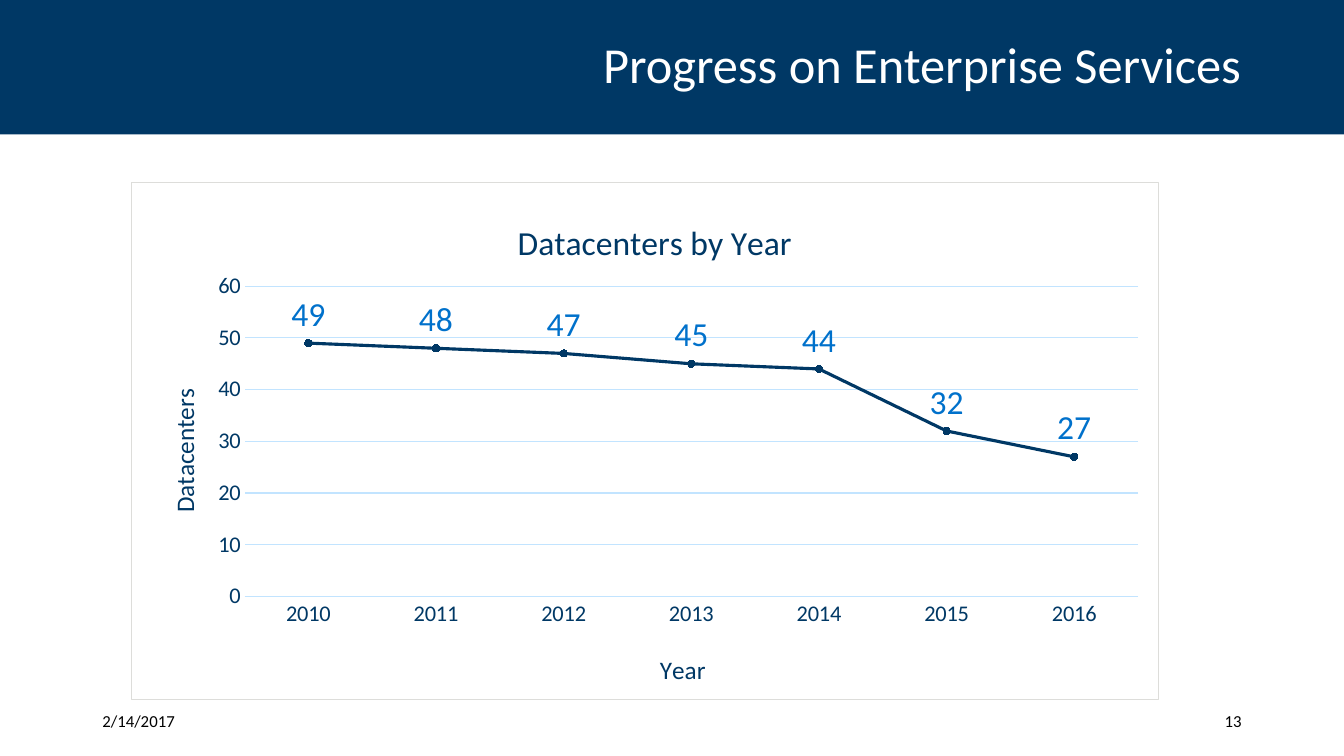
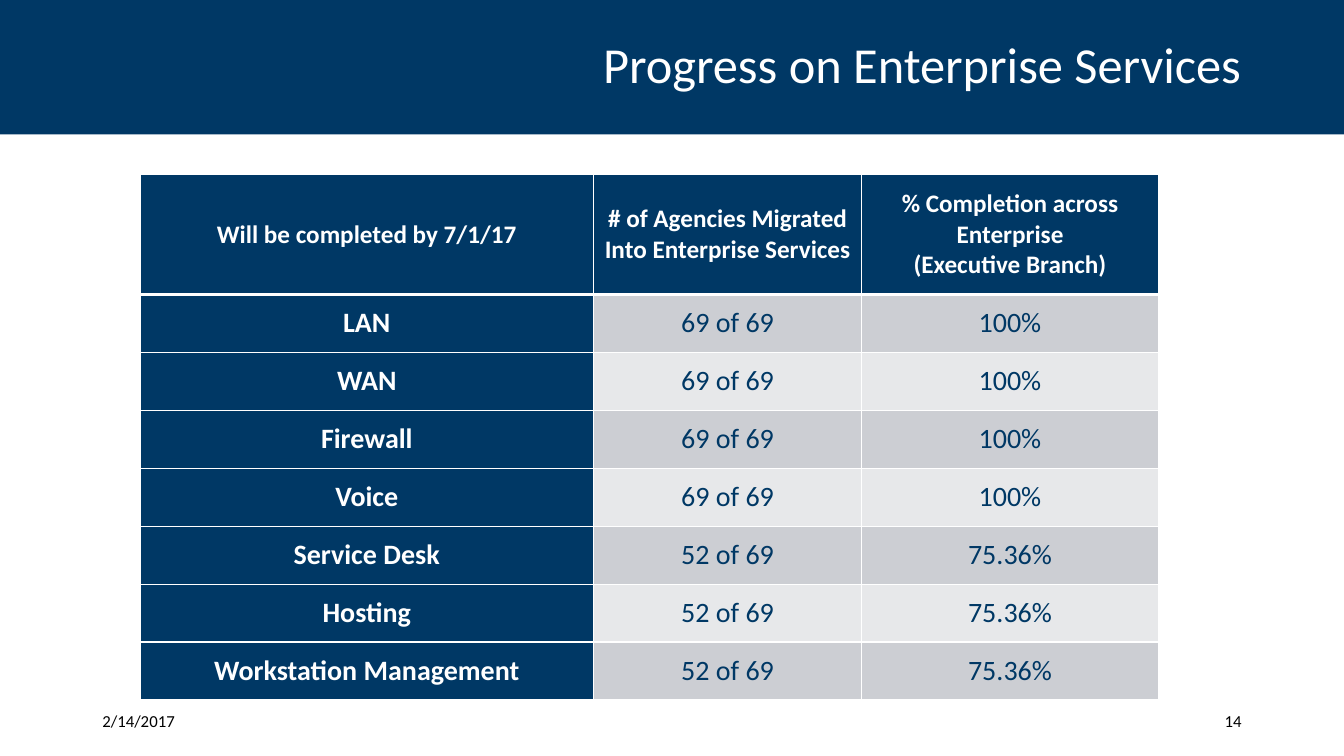
"""Build two slides on enterprise services: a line chart and a status table."""
import lxml.etree
import pptx
import pptx.chart.data
import pptx.dml.color
import pptx.enum.chart
import pptx.enum.shapes
import pptx.enum.text
import pptx.oxml
import pptx.oxml.ns
import pptx.util

Pt = pptx.util.Pt
qn = pptx.oxml.ns.qn
ALIGN = pptx.enum.text.PP_ALIGN
MIDDLE = pptx.enum.text.MSO_ANCHOR.MIDDLE
FONT = "Calibri"
HEX = {"navy": "003865", "white": "FFFFFF", "black": "000000", "blue": "0071CB",
       "grid": "C2E4FF", "frame": "DDDDDA", "dark": "CCCED3", "light": "E7E8EA"}


class Deck:
    def __init__(self):
        self.file = pptx.Presentation()
        self.file.slide_width, self.file.slide_height = Pt(960), Pt(540)
        self.slide = None

    def color(self, name):
        return pptx.dml.color.RGBColor.from_string(HEX[name])

    def style(self, font, size, color, bold=False):
        font.name, font.size, font.bold = FONT, Pt(size), bold
        font.color.rgb = self.color(color)

    def paint(self, fill, color):
        fill.solid()
        fill.fore_color.rgb = self.color(color)

    def stroke(self, line, color, width):
        self.paint(line.fill, color)
        line.width = Pt(width)

    def words(self, frame, text, size, color, align):
        frame.text = text
        frame.word_wrap, frame.vertical_anchor = True, MIDDLE
        line = frame.paragraphs[0]
        line.alignment = align
        self.style(line.font, size, color)
        return line

    def label(self, text, left, width, align):
        box = self.slide.shapes.add_textbox(Pt(left), Pt(500.4), Pt(width), Pt(28.8))
        self.words(box.text_frame, text, 12, "black", align)

    def page(self, title, number):
        self.slide = self.file.slides.add_slide(self.file.slide_layouts[5])
        shapes = self.slide.shapes
        band = shapes.add_shape(pptx.enum.shapes.MSO_SHAPE.RECTANGLE, 0, 0, Pt(960), Pt(96))
        band.shadow.inherit = False
        self.paint(band.fill, "navy")
        band.line.fill.background()
        head = shapes.title
        head._element.addprevious(band._element)
        head.left, head.top, head.width, head.height = Pt(66), Pt(12), Pt(828), Pt(72)
        self.words(head.text_frame, title, 36, "white", ALIGN.RIGHT).line_spacing = 0.9
        self.label("2/14/2017", 66, 107, ALIGN.LEFT)
        self.label(str(number), 779, 115, ALIGN.RIGHT)

    def place(self, node, **parts):
        spot = node.find(qn("c:layout"))
        if spot is None:
            spot = lxml.etree.Element(qn("c:layout"))
            node.insert(0, spot)
        plan = lxml.etree.SubElement(spot, qn("c:manualLayout"))
        if "w" in parts:
            lxml.etree.SubElement(plan, qn("c:layoutTarget")).set("val", "inner")
        for key in "xy":
            lxml.etree.SubElement(plan, qn(f"c:{key}Mode")).set("val", "edge")
        for key, value in parts.items():
            lxml.etree.SubElement(plan, qn(f"c:{key}")).set("val", str(value))

    def name(self, title, text, size, x, y):
        frame = title.text_frame
        frame.text = text
        self.style(frame.paragraphs[0].font, size, "navy")
        self.place(frame._txBody.getparent().getparent(), x=x, y=y)
        return frame

    def axis(self, axis):
        axis.major_tick_mark = axis.minor_tick_mark = pptx.enum.chart.XL_TICK_MARK.NONE
        self.style(axis.tick_labels.font, 16, "navy")

    def chart(self, title, years, counts):
        data = pptx.chart.data.CategoryChartData()
        data.categories = years
        data.add_series("Series 1", counts)
        kind = pptx.enum.chart.XL_CHART_TYPE.LINE_MARKERS_STACKED
        chart = self.slide.shapes.add_chart(
            kind, Pt(93.6), Pt(130.3), Pt(734.4), Pt(370), data).chart
        self.style(chart.font, 10, "navy")
        chart.has_legend = False
        self.name(chart.chart_title, title, 24, 0.37, 0.06)
        base, side = chart.category_axis, chart.value_axis
        self.axis(base)
        self.axis(side)
        self.name(base.axis_title, "Year", 18, 0.51, 0.9)
        upright = self.name(side.axis_title, "Datacenters", 18, 0.03, 0.39)
        turn = upright._txBody.find(qn("a:bodyPr"))
        turn.set("rot", "-5400000")
        turn.set("vert", "horz")
        self.stroke(base.format.line, "grid", 0.75)
        side.format.line.fill.background()
        self.stroke(side.major_gridlines.format.line, "grid", 0.75)
        side.minimum_scale, side.maximum_scale, side.major_unit = 0, 60, 10

        plot = chart.plots[0]
        plot.vary_by_categories = False
        row = plot.series[0]
        row.smooth = False
        self.stroke(row.format.line, "navy", 2.25)
        row.marker.style, row.marker.size = pptx.enum.chart.XL_MARKER_STYLE.CIRCLE, 5
        self.paint(row.marker.format.fill, "navy")
        self.stroke(row.marker.format.line, "navy", 0.75)
        tags = row.data_labels
        tags.show_value = True
        tags.position = pptx.enum.chart.XL_LABEL_POSITION.ABOVE
        self.style(tags.font, 24, "blue")

        body = chart._chartSpace.find(qn("c:chart"))
        self.place(body.find(qn("c:plotArea")), x=0.11, y=0.2, w=0.87, h=0.6)
        body.addnext(pptx.oxml.parse_xml(
            f'<c:spPr {pptx.oxml.ns.nsdecls("c", "a")}><a:noFill/><a:ln w="{Pt(0.75)}">'
            f'<a:solidFill><a:srgbClr val="{HEX["frame"]}"/></a:solidFill></a:ln></c:spPr>'))

    def edge(self, cell, widths):
        props = cell._tc.get_or_add_tcPr()
        for spot, (side, width) in enumerate(widths.items()):
            props.insert(spot, pptx.oxml.parse_xml(
                f'<a:ln{side} {pptx.oxml.ns.nsdecls("a")} w="{Pt(width)}"><a:solidFill>'
                f'<a:srgbClr val="{HEX["white"]}"/></a:solidFill></a:ln{side}>'))

    def cell(self, cell, text, row, col):
        lead = row == 0 or col == 0
        cell.text = text
        cell.vertical_anchor = MIDDLE
        cell.margin_left = cell.margin_right = Pt(5)
        cell.margin_top = cell.margin_bottom = 0
        for line in cell.text_frame.paragraphs:
            line.alignment = ALIGN.CENTER
            self.style(line.font, 20 if row else 18, "white" if lead else "navy", lead)
        self.paint(cell.fill, "navy" if lead else "dark" if row % 2 else "light")
        self.edge(cell, {"L": 1, "R": 1, "T": 3 if row == 1 else 1, "B": 1 if row else 3})

    def table(self, rows, widths, tall, short):
        high = tall + short * (len(rows) - 1)
        grid = self.slide.shapes.add_table(
            len(rows), len(widths), Pt(100), Pt(124.6), Pt(sum(widths)), Pt(high)).table
        grid.horz_banding = False
        for col, width in zip(grid.columns, widths):
            col.width = Pt(width)
        for r, texts in enumerate(rows):
            grid.rows[r].height = Pt(short if r else tall)
            for c, text in enumerate(texts):
                self.cell(grid.cell(r, c), text, r, c)


def main():
    deck = Deck()
    title = "Progress on Enterprise Services"
    deck.page(title, 13)
    deck.chart("Datacenters by Year", [str(year) for year in range(2010, 2017)],
               [49, 48, 47, 45, 44, 32, 27])
    deck.page(title, 14)
    head = ("Will be completed by 7/1/17", "# of Agencies Migrated Into Enterprise Services",
            "% Completion across Enterprise\n(Executive Branch)")
    done = [(name, "69 of 69", "100%") for name in ("LAN", "WAN", "Firewall", "Voice")]
    part = [(name, "52 of 69", "75.36%")
            for name in ("Service Desk", "Hosting", "Workstation Management")]
    deck.table([head] + done + part, [324, 191.5, 212], 85.7, 41.4)
    deck.file.save("out.pptx")


if __name__ == "__main__":
    main()
